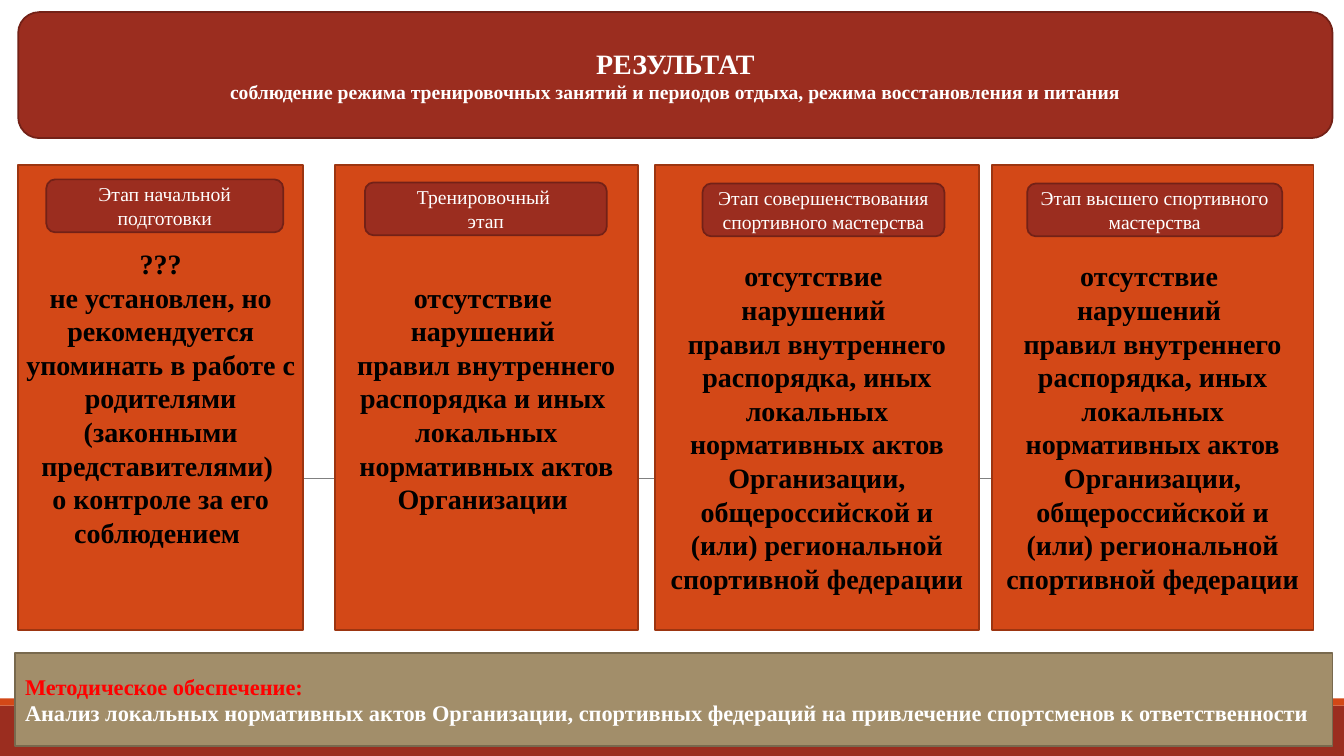
import pptx
import pptx.util
import pptx.dml.color
import pptx.enum.shapes
import pptx.enum.text
from dataclasses import dataclass

Inches, Pt = pptx.util.Inches, pptx.util.Pt
Shape = pptx.enum.shapes.MSO_SHAPE
Align = pptx.enum.text.PP_ALIGN
Middle = pptx.enum.text.MSO_ANCHOR.MIDDLE
WIDTH, HEIGHT = Inches(13.33), Inches(7.5)
COLS, ROWS = 160, 90


@dataclass(frozen=True)
class Theme:
    """Colours, type sizes and line widths of the slide."""
    font: str = "Times New Roman"
    brick: str = "9B2D1F"
    maroon: str = "732117"
    orange: str = "D34817"
    rust: str = "9C3511"
    sand: str = "A28E6A"
    olive: str = "78694E"
    grey: str = "808080"
    red: str = "FF0000"
    white: str = "FFFFFF"
    black: str = "000000"
    big: int = 20
    mid: int = 16
    small: int = 14
    edge: float = 1.25
    thin: float = 0.5


THEME = Theme()
ABSENT = ["отсутствие ", "нарушений "]
RULES = ABSENT + [
    "правил внутреннего распорядка, иных локальных нормативных актов "
    "Организации, общероссийской и (или) региональной спортивной федерации"]
STAGES = [
    ((2.16, 33.96), (3.36, 1.68, 28.2), (0.04, 0, 0.04, 0),
     ["Этап начальной подготовки"],
     ["???",
      "не установлен, но рекомендуется упоминать в работе с родителями "
      "(законными представителями) ",
      "о контроле за его соблюдением "]),
    ((39.84, 36.12), (3.6, 2.04, 28.8), (0.1, 0.05, 0.1, 0.05),
     ["Тренировочный ", "этап"],
     ABSENT + ["правил внутреннего распорядка и иных ",
               "локальных нормативных актов Организации "]),
    ((78, 38.52), (5.64, 2.16, 28.8), (0.1, 0.63, 0.1, 0.05),
     ["Этап совершенствования спортивного мастерства"], RULES),
    ((118.08, 38.28), (4.2, 2.16, 30.36), (0.1, 0.63, 0.1, 0.05),
     ["Этап высшего спортивного мастерства"], RULES),
]


def rgb(code):
    """Turn a hex code into a colour."""
    return pptx.dml.color.RGBColor.from_string(code)


def place(box):
    """Turn a box in grid cells into slide lengths."""
    x, y, w, h = box
    return (int(WIDTH * x / COLS), int(HEIGHT * y / ROWS),
            int(WIDTH * w / COLS), int(HEIGHT * h / ROWS))


def block(slide, kind, box, fill, edge=None):
    """Draw a filled shape, with an outline if one is named."""
    shape = slide.shapes.add_shape(kind, *place(box))
    shape.shadow.inherit = False
    shape.fill.solid()
    shape.fill.fore_color.rgb = rgb(fill)
    if edge:
        shape.line.color.rgb = rgb(edge)
        shape.line.width = Pt(THEME.edge)
    else:
        shape.line.fill.background()
    return shape


def write(shape, lines, inset=(0.1, 0.05, 0.1, 0.05)):
    """Fill a shape with lines of text, size, colour, weight and alignment."""
    frame = shape.text_frame
    frame.word_wrap = True
    frame.auto_size = pptx.enum.text.MSO_AUTO_SIZE.NONE
    frame.vertical_anchor = Middle
    (frame.margin_left, frame.margin_top,
     frame.margin_right, frame.margin_bottom) = map(Inches, inset)
    frame.text = "\n".join(line[0] for line in lines)
    for par, (_, size, color, bold, align) in zip(frame.paragraphs, lines):
        par.alignment = align
        font = par.font
        font.name, font.size, font.bold = THEME.font, Pt(size), bold
        font.color.rgb = rgb(color)


def base(slide):
    """Draw the bands at the foot and the rule behind the cards."""
    block(slide, Shape.RECTANGLE, (0, 84, COLS, 6), THEME.brick)
    block(slide, Shape.RECTANGLE, (0, 83.16, COLS, 0.84), THEME.orange)
    x, y, w, _ = place((15.84, 57, 129.6, 0))
    rule = slide.shapes.add_connector(
        pptx.enum.shapes.MSO_CONNECTOR.STRAIGHT, x, y, x + w, y)
    rule.line.color.rgb = rgb(THEME.grey)
    rule.line.width = Pt(THEME.thin)
    rule._element.spPr.append(pptx.oxml.parse_xml(
        '<a:effectLst xmlns:a='
        '"http://schemas.openxmlformats.org/drawingml/2006/main"/>'))


def banner(slide, box):
    """Draw the rounded banner and set the title on it."""
    block(slide, Shape.ROUNDED_RECTANGLE, box, THEME.brick, THEME.maroon)
    title = slide.shapes.title
    title.left, title.top, title.width, title.height = place(box)
    write(title, [
        ("РЕЗУЛЬТАТ", THEME.big, THEME.white, True, Align.CENTER),
        ("соблюдение режима тренировочных занятий и периодов отдыха, "
         "режима восстановления и питания",
         THEME.small, THEME.white, True, Align.CENTER)])
    slide.shapes._spTree.append(title._element)


def card(slide, box, tag, inset, name, text):
    """Draw one stage card with its name tag."""
    x, y, _, _ = box
    dx, dy, wide = tag
    body = block(slide, Shape.RECTANGLE, box, THEME.orange, THEME.rust)
    write(body, [(t, THEME.big, THEME.black, True, Align.CENTER)
                 for t in text], inset)
    label = block(slide, Shape.ROUNDED_RECTANGLE, (x + dx, y + dy, wide, 6.3),
                  THEME.brick, THEME.maroon)
    write(label, [(t, THEME.small, THEME.white, False, Align.CENTER)
                  for t in name])


def footer(slide, box):
    """Draw the panel on method support."""
    panel = block(slide, Shape.RECTANGLE, box, THEME.sand, THEME.olive)
    write(panel, [
        ("Методическое обеспечение:", THEME.mid, THEME.red, True, Align.LEFT),
        ("Анализ локальных нормативных актов Организации, спортивных "
         "федераций на привлечение спортсменов к ответственности",
         THEME.mid, THEME.white, True, Align.JUSTIFY)])


def main():
    """Build the slide and save it."""
    deck = pptx.Presentation()
    deck.slide_width, deck.slide_height = WIDTH, HEIGHT
    slide = deck.slides.add_slide(deck.slide_layouts[5])
    base(slide)
    banner(slide, (2.16, 1.44, 156.48, 15))
    for (x, wide), tag, inset, name, text in STAGES:
        card(slide, (x, 19.68, wide, 55.32), tag, inset, name, text)
    footer(slide, (1.8, 77.76, 156.84, 11.04))
    deck.save("out.pptx")


if __name__ == "__main__":
    main()
